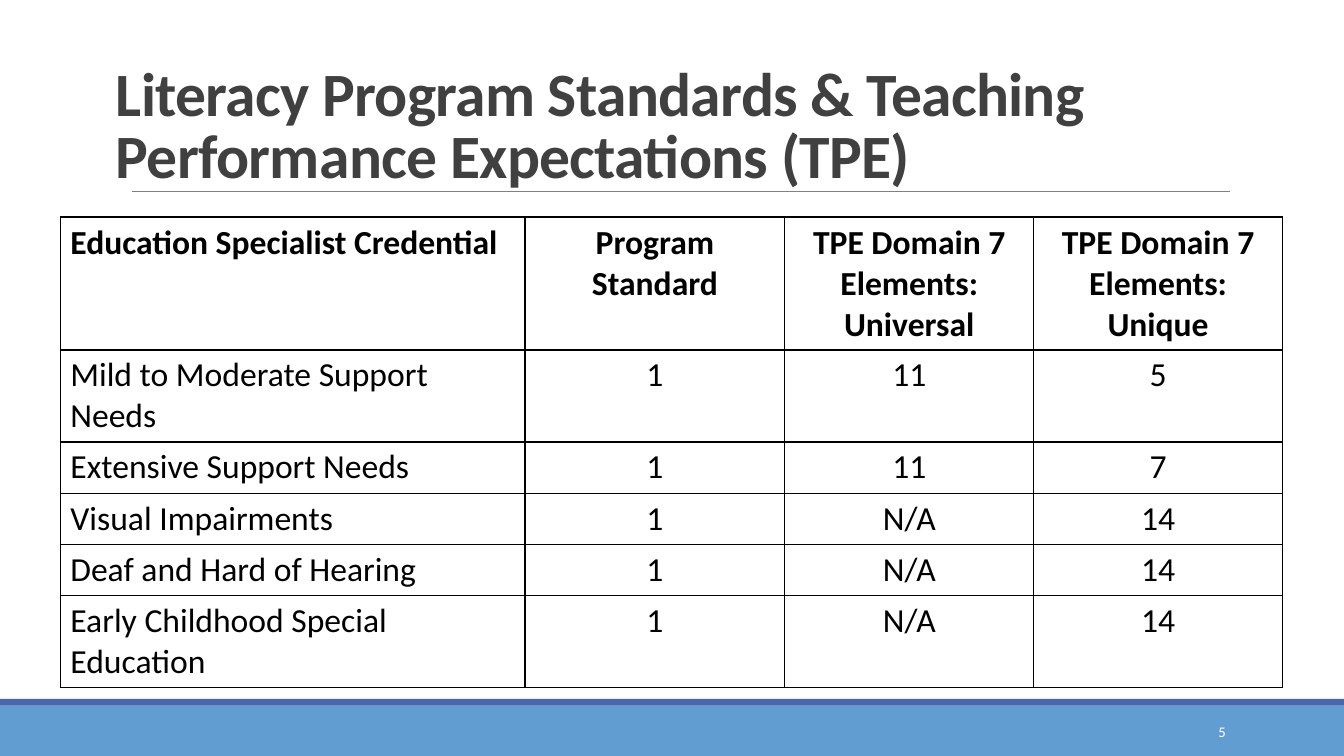
from lxml.etree import SubElement
from pptx import Presentation
from pptx.dml.color import RGBColor
from pptx.enum.shapes import MSO_CONNECTOR, MSO_SHAPE
from pptx.enum.text import MSO_ANCHOR, PP_ALIGN
from pptx.oxml.ns import qn
from pptx.util import Cm, Pt

# Content
TITLE = "Literacy Program Standards & Teaching Performance Expectations (TPE)"
PAGE_NUMBER = "5"
HEADER = ("Education Specialist Credential", "Program Standard",
          "TPE Domain 7 Elements: Universal", "TPE Domain 7 Elements: Unique")
CREDENTIALS = [
    ("Mild to Moderate Support Needs", "1", "11", "5"),
    ("Extensive Support Needs", "1", "11", "7"),
    ("Visual Impairments", "1", "N/A", "14"),
    ("Deaf and Hard of Hearing", "1", "N/A", "14"),
    ("Early Childhood Special Education", "1", "N/A", "14"),
]
ROW_LINES = (3, 2, 1, 1, 1, 2)
COLUMN_WIDTHS = (11.71, 6.55, 6.27, 6.27)

# Style
FONT = "Calibri"
BLACK = RGBColor(0x00, 0x00, 0x00)
WHITE = RGBColor(0xFF, 0xFF, 0xFF)
DARK_GRAY = RGBColor(0x40, 0x40, 0x40)
RULE_GRAY = RGBColor(0x80, 0x80, 0x80)
LIGHT_BLUE = RGBColor(0x62, 0x9D, 0xD1)
DEEP_BLUE = RGBColor(0x4A, 0x66, 0xAC)
SLIDE_WIDTH, SLIDE_HEIGHT = 33.87, 19.05
FOOTER_HEIGHT, STRIPE_HEIGHT = 1.27, 0.17
LINE_HEIGHT, CELL_PADDING = 1.03, 0.26


def style(paragraph, size, color, bold=False, align=PP_ALIGN.LEFT):
    paragraph.alignment = align
    font = paragraph.font
    font.name, font.size, font.bold = FONT, Pt(size), bold
    font.color.rgb = color


def add_band(slide, top, height, color):
    band = slide.shapes.add_shape(MSO_SHAPE.RECTANGLE, Cm(0), Cm(top),
                                  Cm(SLIDE_WIDTH), Cm(height))
    band.shadow.inherit = False
    band.fill.solid()
    band.fill.fore_color.rgb = color
    band.line.fill.background()


def add_text(slide, text, left, top, width, height, anchor):
    frame = slide.shapes.add_textbox(Cm(left), Cm(top), Cm(width), Cm(height)).text_frame
    frame.word_wrap = True
    frame.vertical_anchor = anchor
    frame.text = text
    return frame.paragraphs[0]


def add_borders(cell):
    properties = cell._tc.get_or_add_tcPr()
    for side in ("a:lnL", "a:lnR", "a:lnT", "a:lnB"):
        border = SubElement(properties, qn(side), w=str(Pt(1)))
        fill = SubElement(border, qn("a:solidFill"))
        SubElement(fill, qn("a:srgbClr"), val=str(BLACK))


def add_credential_table(slide):
    rows = [HEADER] + CREDENTIALS
    heights = [CELL_PADDING + LINE_HEIGHT * lines for lines in ROW_LINES]
    table = slide.shapes.add_table(len(rows), len(HEADER), Cm(1.52), Cm(5.47),
                                   Cm(sum(COLUMN_WIDTHS)), Cm(sum(heights))).table
    table.horz_banding = False
    for column, width in zip(table.columns, COLUMN_WIDTHS):
        column.width = Cm(width)
    for r, (values, height) in enumerate(zip(rows, heights)):
        table.rows[r].height = Cm(height)
        for c, value in enumerate(values):
            cell = table.cell(r, c)
            cell.text = value
            style(cell.text_frame.paragraphs[0], 24, BLACK, bold=r == 0,
                  align=PP_ALIGN.CENTER if c else PP_ALIGN.LEFT)
            add_borders(cell)
            cell.fill.background()


def main():
    deck = Presentation()
    deck.slide_width, deck.slide_height = Cm(SLIDE_WIDTH), Cm(SLIDE_HEIGHT)
    slide = deck.slides.add_slide(deck.slide_layouts[6])

    # Footer bands
    footer_top = SLIDE_HEIGHT - FOOTER_HEIGHT
    add_band(slide, footer_top, FOOTER_HEIGHT, LIGHT_BLUE)
    add_band(slide, footer_top - STRIPE_HEIGHT, STRIPE_HEIGHT, DEEP_BLUE)

    # Rule under the title
    rule = slide.shapes.add_connector(MSO_CONNECTOR.STRAIGHT, Cm(3.33), Cm(4.82),
                                      Cm(31), Cm(4.82))
    rule.line.color.rgb = RULE_GRAY
    rule.line.width = Pt(0.5)
    SubElement(rule._element.spPr, qn("a:effectLst"))

    # Title
    title = add_text(slide, TITLE, 2.67, 0.91, 28.73, 4.04, MSO_ANCHOR.BOTTOM)
    style(title, 44, DARK_GRAY, bold=True)
    title.line_spacing = 0.85
    title.runs[0].font._element.set("spc", "-50")

    # Page number
    page = add_text(slide, PAGE_NUMBER, 27.51, 17.93, 3.63, 1.02, MSO_ANCHOR.MIDDLE)
    style(page, 10.5, WHITE, align=PP_ALIGN.RIGHT)

    add_credential_table(slide)
    deck.save("out.pptx")


if __name__ == "__main__":
    main()
